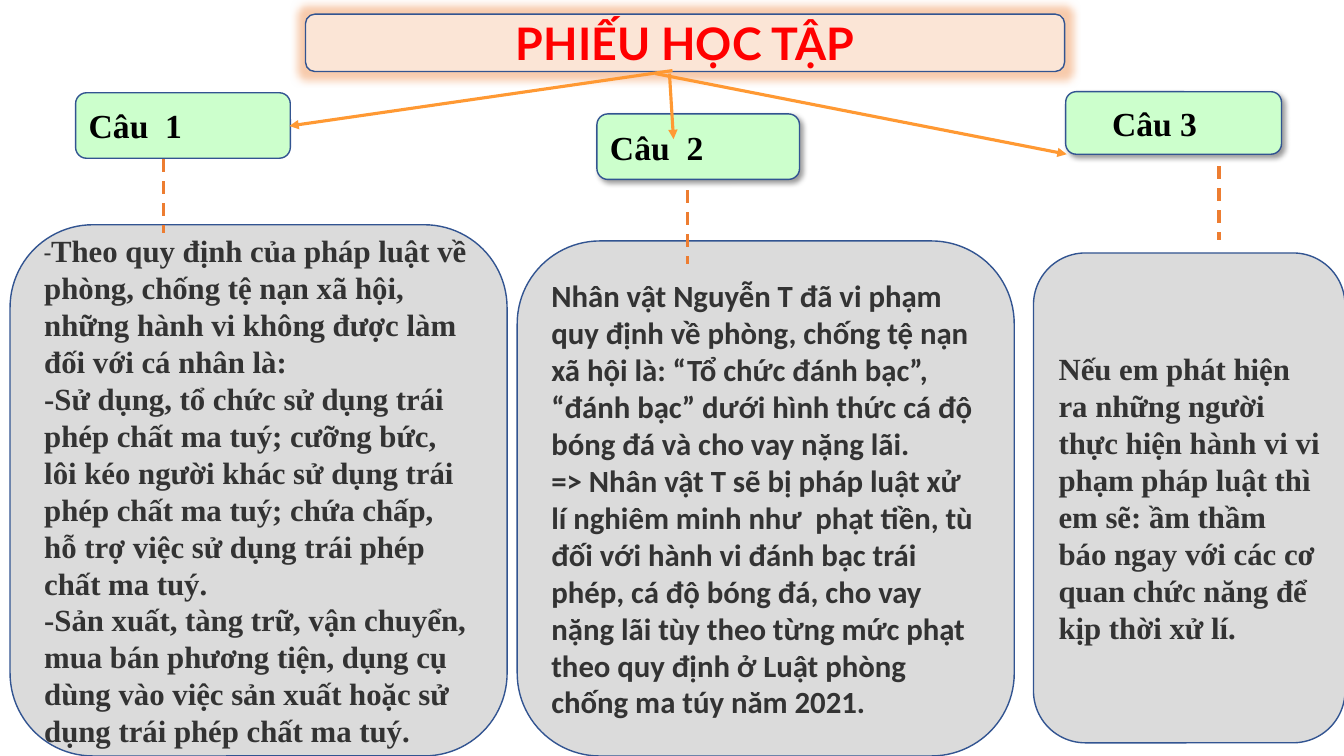
"""Builds the study worksheet slide with three questions and their answers."""
from dataclasses import dataclass

from pptx import Presentation
from pptx.dml.color import RGBColor
from pptx.enum.dml import MSO_LINE
from pptx.enum.shapes import MSO_CONNECTOR, MSO_SHAPE
from pptx.enum.text import MSO_ANCHOR, PP_ALIGN
from pptx.oxml import parse_xml
from pptx.oxml.ns import nsdecls, qn
from pptx.util import Pt

ROUNDED = MSO_SHAPE.ROUNDED_RECTANGLE
STRAIGHT = MSO_CONNECTOR.STRAIGHT
DASH = MSO_LINE.DASH
MIDDLE = MSO_ANCHOR.MIDDLE
LEFT, CENTER, JUSTIFY = PP_ALIGN.LEFT, PP_ALIGN.CENTER, PP_ALIGN.JUSTIFY
EMU_PER_PX = 9144


@dataclass(frozen=True)
class Theme:
    """Colours, fonts and type sizes of the slide."""
    title_fill: str = "FBE5D6"
    label_fill: str = "CCFFCC"
    answer_fill: str = "DBDBDB"
    outline: str = "325491"
    title_text: str = "FF0000"
    label_text: str = "000000"
    answer_text: str = "333333"
    arrow: str = "FF9933"
    dash: str = "ED7D31"
    title_font: str = "Lato"
    serif: str = "Times New Roman"
    sans: str = "Calibri"
    hyphen_font: str = "Roboto"
    title_size: int = 32
    label_size: int = 24
    answer_size: int = 22
    hyphen_size: int = 18


THEME = Theme()
GLOW = (f'<a:glow {nsdecls("a")} rad="139700"><a:srgbClr val="{THEME.dash}">'
        '<a:alpha val="40000"/></a:srgbClr></a:glow>')
SHADOW = (f'<a:outerShdw {nsdecls("a")} blurRad="50800" dist="38100" dir="2700000" '
          'algn="tl" rotWithShape="0"><a:srgbClr val="000000">'
          '<a:alpha val="40000"/></a:srgbClr></a:outerShdw>')

LABELS = [
    ("Câu  1", (75, 92, 213, 65), None, 10),
    ("Câu  2", (592, 113, 201, 65), SHADOW, 10),
    ("Câu 3", (1057, 91, 214, 62), SHADOW, 43),
]
ANSWERS = [
    ((10, 223, 493, 527), THEME.serif, [
        "Theo quy định của pháp luật về phòng, chống tệ nạn xã hội, những hành vi "
        "không được làm đối với cá nhân là:",
        "-Sử dụng, tổ chức sử dụng trái phép chất ma tuý; cưỡng bức, lôi kéo người "
        "khác sử dụng trái phép chất ma tuý; chứa chấp, hỗ trợ việc sử dụng trái "
        "phép chất ma tuý.",
        "-Sản xuất, tàng trữ, vận chuyển, mua bán phương tiện, dụng cụ dùng vào "
        "việc sản xuất hoặc sử dụng trái phép chất ma tuý."]),
    ((513, 239, 493, 511), THEME.sans, [
        "Nhân vật Nguyễn T đã vi phạm quy định về phòng, chống tệ nạn xã hội là: "
        "“Tổ chức đánh bạc”, “đánh bạc” dưới hình thức cá độ bóng đá và cho vay "
        "nặng lãi.",
        "=> Nhân vật T sẽ bị pháp luật xử lí nghiêm minh như  phạt tiền, tù đối "
        "với hành vi đánh bạc trái phép, cá độ bóng đá, cho vay nặng lãi tùy theo "
        "từng mức phạt theo quy định ở Luật phòng chống ma túy năm 2021."]),
    ((1025, 251, 309, 486), THEME.serif, [
        "Nếu em phát hiện ra những người thực hiện hành vi vi phạm pháp luật thì "
        "em sẽ: ầm thầm báo ngay với các cơ quan chức năng để kịp thời xử lí."]),
]
ARROWS = [(650, 73, 1058, 153), (667, 70, 287, 125), (664, 73, 668, 138)]
DASHES = [(162, 158), (682, 189), (1209, 165)]
DASH_LENGTH = 73


def px(*lengths):
    """Turn pixel lengths into EMU."""
    return [length * EMU_PER_PX for length in lengths]


def add_box(slide, bounds, fill, effect=None):
    """Add an outlined rounded box with an optional glow or shadow."""
    shape = slide.shapes.add_shape(ROUNDED, *px(*bounds))
    shape.fill.solid()
    shape.fill.fore_color.rgb = RGBColor.from_string(fill)
    shape.line.color.rgb = RGBColor.from_string(THEME.outline)
    shape.line.width = Pt(1)
    shape.shadow.inherit = False
    if effect:
        shape._element.spPr.find(qn("a:effectLst")).append(parse_xml(effect))
    shape.text_frame.word_wrap = True
    shape.text_frame.vertical_anchor = MIDDLE
    return shape


def add_run(paragraph, text, font, size, color, bold=True):
    """Add one formatted run to a paragraph."""
    run = paragraph.add_run()
    run.text = text
    run.font.name = font
    run.font.size = Pt(size)
    run.font.bold = bold
    run.font.color.rgb = RGBColor.from_string(color)


def add_title(slide):
    """Add the glowing title box."""
    shape = add_box(slide, (303, 14, 753, 57), THEME.title_fill, GLOW)
    paragraph = shape.text_frame.paragraphs[0]
    paragraph.alignment = CENTER
    add_run(paragraph, "PHIẾU HỌC TẬP", THEME.title_font, THEME.title_size,
            THEME.title_text)


def add_label(slide, text, bounds, effect, indent):
    """Add a green question label."""
    shape = add_box(slide, bounds, THEME.label_fill, effect)
    shape.text_frame.margin_left = px(indent)[0]
    paragraph = shape.text_frame.paragraphs[0]
    paragraph.alignment = JUSTIFY
    add_run(paragraph, text, THEME.serif, THEME.label_size, THEME.label_text)


def add_answer(slide, bounds, font, texts):
    """Add a grey answer box and return its paragraphs."""
    frame = add_box(slide, bounds, THEME.answer_fill).text_frame
    for index, text in enumerate(texts):
        paragraph = frame.add_paragraph() if index else frame.paragraphs[0]
        paragraph.alignment = LEFT
        if text.startswith("Theo"):
            add_run(paragraph, "-", THEME.hyphen_font, THEME.hyphen_size,
                    THEME.answer_text, bold=False)
        add_run(paragraph, text, font, THEME.answer_size, THEME.answer_text)


def add_line(slide, ends, color, dashed=False):
    """Add a dashed line, or a solid one with an arrowhead."""
    connector = slide.shapes.add_connector(STRAIGHT, *px(*ends))
    connector.line.color.rgb = RGBColor.from_string(color)
    connector.line.width = Pt(2.25)
    properties = connector._element.spPr
    if dashed:
        connector.line.dash_style = DASH
    else:
        properties.find(qn("a:ln")).append(
            parse_xml(f'<a:tailEnd {nsdecls("a")} type="triangle"/>'))
    properties.append(parse_xml(f'<a:effectLst {nsdecls("a")}/>'))


def main():
    """Build and save the slide."""
    presentation = Presentation()
    presentation.slide_width, presentation.slide_height = px(1333, 750)
    slide = presentation.slides.add_slide(presentation.slide_layouts[6])
    add_title(slide)
    for label in LABELS:
        add_label(slide, *label)
    for answer in ANSWERS:
        add_answer(slide, *answer)
    for ends in ARROWS:
        add_line(slide, ends, THEME.arrow)
    for x, top in DASHES:
        add_line(slide, (x, top, x, top + DASH_LENGTH), THEME.dash, dashed=True)
    presentation.save("out.pptx")


if __name__ == "__main__":
    main()
